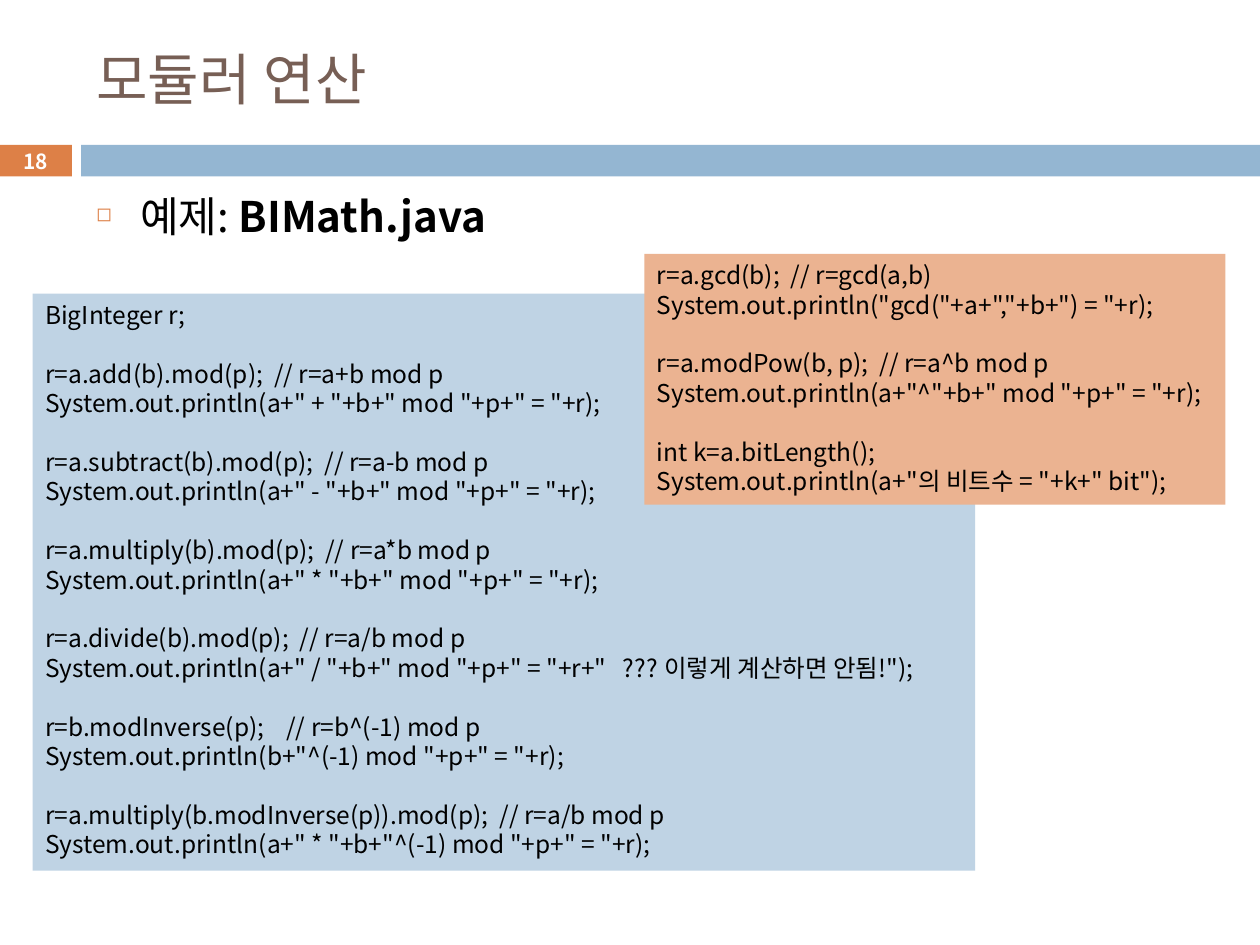
from dataclasses import dataclass

from lxml.etree import SubElement
from pptx import Presentation
from pptx.dml.color import RGBColor
from pptx.enum.shapes import MSO_SHAPE as Shape
from pptx.enum.text import MSO_ANCHOR as Anchor, MSO_AUTO_SIZE as Fit, PP_ALIGN as Align
from pptx.oxml.ns import qn
from pptx.util import Inches, Pt


@dataclass(frozen=True)
class Theme:
    font: str = "Noto Sans CJK KR"
    title: str = "775F55"
    text: str = "000000"
    light: str = "FFFFFF"
    accent: str = "DD8047"
    band: str = "94B6D2"
    blue_panel: str = "BFD3E4"
    orange_panel: str = "EBB391"
    title_size: float = 32
    body_size: float = 24
    code_size: float = 14
    number_size: float = 11.9
    leading: float = 1.2
    bullet_percent: int = 46


ARITHMETIC = [
    ["BigInteger r;"],
    ["r=a.add(b).mod(p);  // r=a+b mod p",
     'System.out.println(a+" + "+b+" mod "+p+" = "+r);'],
    ["r=a.subtract(b).mod(p);  // r=a-b mod p",
     'System.out.println(a+" - "+b+" mod "+p+" = "+r);'],
    ["r=a.multiply(b).mod(p);  // r=a*b mod p",
     'System.out.println(a+" * "+b+" mod "+p+" = "+r);'],
    ["r=a.divide(b).mod(p);  // r=a/b mod p",
     'System.out.println(a+" / "+b+" mod "+p+" = "+r+"   ??? 이렇게 계산하면 안됨!");'],
    ["r=b.modInverse(p);    // r=b^(-1) mod p",
     'System.out.println(b+"^(-1) mod "+p+" = "+r);'],
    ["r=a.multiply(b.modInverse(p)).mod(p);  // r=a/b mod p",
     'System.out.println(a+" * "+b+"^(-1) mod "+p+" = "+r);'],
]
NUMBER_THEORY = [
    ["r=a.gcd(b);  // r=gcd(a,b)",
     'System.out.println("gcd("+a+","+b+") = "+r);'],
    ["r=a.modPow(b, p);  // r=a^b mod p",
     'System.out.println(a+"^"+b+" mod "+p+" = "+r);'],
    ["int k=a.bitLength();",
     'System.out.println(a+"의 비트수 = "+k+" bit");'],
]


class SlideBuilder:
    """Places elements on a grid of 100 columns by 75 rows."""

    def __init__(self, deck, theme):
        self.theme = theme
        self.column = deck.slide_width / 100
        self.row = deck.slide_height / 75
        self.page = deck.slides.add_slide(deck.slide_layouts[5])

    def cells(self, left, top, width, height):
        return (round(left * self.column), round(top * self.row),
                round(width * self.column), round(height * self.row))

    def style(self, span, size, color, bold=False):
        span.font.name = self.theme.font
        span.font.size = Pt(size)
        span.font.bold = bold
        span.font.color.rgb = RGBColor.from_string(color)
        east_asian = SubElement(span.font._element, qn("a:ea"))
        east_asian.set("typeface", self.theme.font)

    def centre_vertically(self, frame):
        frame.margin_top = frame.margin_bottom = 0
        frame.vertical_anchor = Anchor.MIDDLE

    def title(self, text, area):
        box = self.page.shapes.title
        box.left, box.top, box.width, box.height = self.cells(*area)
        box.text_frame.text = text
        self.centre_vertically(box.text_frame)
        para = box.text_frame.paragraphs[0]
        para.alignment = Align.LEFT
        self.style(para.runs[0], self.theme.title_size, self.theme.title)

    def panel(self, area, color):
        box = self.page.shapes.add_shape(Shape.RECTANGLE, *self.cells(*area))
        box.shadow.inherit = False
        box.fill.solid()
        box.fill.fore_color.rgb = RGBColor.from_string(color)
        box.line.fill.background()
        return box

    def page_number(self, text, area):
        frame = self.panel(area, self.theme.accent).text_frame
        self.centre_vertically(frame)
        frame.text = text
        para = frame.paragraphs[0]
        para.alignment = Align.CENTER
        self.style(para.runs[0], self.theme.number_size, self.theme.light, True)

    def code(self, blocks, area, color):
        frame = self.panel(area, color).text_frame
        frame.word_wrap = False
        frame.auto_size = Fit.SHAPE_TO_FIT_TEXT
        frame.vertical_anchor = Anchor.TOP
        frame.text = "\n".join(line for block in blocks for line in block)
        pitch = Pt(self.theme.code_size * self.theme.leading)
        paras = iter(frame.paragraphs)
        for index, block in enumerate(blocks):
            for position, _ in enumerate(block):
                para = next(paras)
                para.alignment = Align.LEFT
                para.line_spacing = pitch
                # One line of space opens every block but the first
                para.space_before = pitch if index and position == 0 else 0
                self.style(para.runs[0], self.theme.code_size, self.theme.text)

    def bullet(self, label, name, area):
        frame = self.page.shapes.add_textbox(*self.cells(*area)).text_frame
        frame.word_wrap = True
        para = frame.paragraphs[0]
        para.line_spacing = Pt(self.theme.body_size * self.theme.leading)
        for text, bold in ((label, False), (name, True)):
            span = para.add_run()
            span.text = text
            self.style(span, self.theme.body_size, self.theme.text, bold)
        # Hanging square bullet
        props = para._p.get_or_add_pPr()
        props.set("marL", str(Inches(0.35)))
        props.set("indent", str(-Inches(0.35)))
        color = SubElement(props, qn("a:buClr"))
        SubElement(color, qn("a:srgbClr")).set("val", self.theme.accent)
        size = SubElement(props, qn("a:buSzPct"))
        size.set("val", str(self.theme.bullet_percent * 1000))
        SubElement(props, qn("a:buChar")).set("char", "◻")


def main():
    deck = Presentation()
    deck.slide_width, deck.slide_height = Inches(10), Inches(7.5)
    theme = Theme()
    slide = SlideBuilder(deck, theme)

    # Heading and divider band
    slide.title("모듈러 연산", (6.65, 2.5, 89.2, 7.4))
    slide.page_number("18", (-0.1, 11.5, 5.8, 2.5))
    slide.panel((6.45, 11.5, 93.55, 2.5), theme.band)

    # Example name and its two listings
    slide.code(ARITHMETIC, (2.6, 23.3, 74.8, 45.8), theme.blue_panel)
    slide.code(NUMBER_THEORY, (51.15, 20.15, 46.1, 19.9), theme.orange_panel)
    slide.bullet("예제: ", "BIMath.java", (6.65, 14.65, 89.2, 5.2))

    deck.save("out.pptx")


if __name__ == "__main__":
    main()
